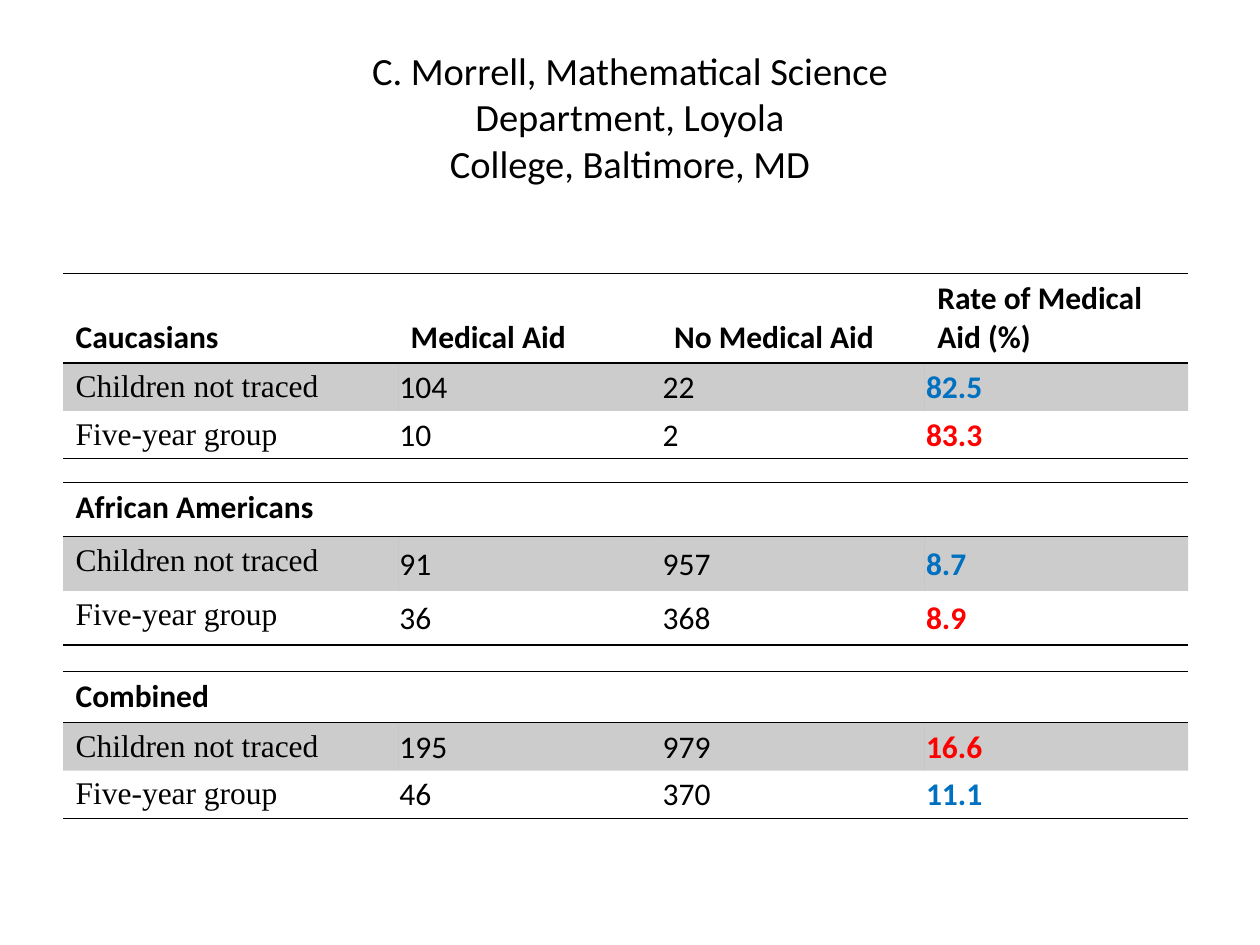
from lxml import etree
from pptx import Presentation
from pptx.dml.color import RGBColor as Rgb
from pptx.enum.text import MSO_ANCHOR as Anchor, PP_ALIGN as Align
from pptx.oxml.ns import qn
from pptx.util import Inches, Pt

INK = {"text": "000000", "band": "000000", "low": "0070C0", "high": "FF0000"}
PLAIN = "{2D5ABB26-0587-4C30-8999-92F81FD0307C}"
COLS = [2.66, 2.09, 2.09, 2.09]
NAMES = ["Children not traced", "Five-year group"]

# top, row heights, header cells, (aid, no aid, rate, rate colour) per row
GROUPS = [
    (2.17, [0.71, 0.38, 0.38],
     ["Caucasians", "Medical Aid", "No Medical Aid", "Rate of Medical Aid (%)"],
     [("104", "22", "82.5", "low"), ("10", "2", "83.3", "high")]),
    (3.83, [0.43, 0.43, 0.43], ["African Americans", "", "", ""],
     [("91", "957", "8.7", "low"), ("36", "368", "8.9", "high")]),
    (5.33, [0.4, 0.38, 0.38], ["Combined", "", "", ""],
     [("195", "979", "16.6", "high"), ("46", "370", "11.1", "low")]),
]


def style(font, size, face="Calibri", color="text", bold=False):
    font.size, font.name, font.bold = Pt(size), face, bold
    font.color.rgb = Rgb.from_string(INK[color])


def add_line(cell, side):
    """Rule one side of a cell: T for top, B for bottom."""
    props = cell._tc.get_or_add_tcPr()
    line = etree.SubElement(props, qn("a:ln" + side), w=str(Pt(1)))
    fill = etree.SubElement(line, qn("a:solidFill"))
    etree.SubElement(fill, qn("a:srgbClr"), val=INK["text"])


def shade(cell):
    """Fill a cell with the band colour at 20 % opacity."""
    cell.fill.solid()
    cell.fill.fore_color.rgb = Rgb.from_string(INK["band"])
    color = cell._tc.tcPr.find(".//" + qn("a:solidFill") + "/" + qn("a:srgbClr"))
    for node in cell._tc.tcPr.findall(qn("a:solidFill")):
        color = node.find(qn("a:srgbClr"))
    etree.SubElement(color, qn("a:alpha"), val="20000")


def write(cell, text, **look):
    cell.text = text
    style(cell.text_frame.paragraphs[0].font, 18)
    for run in cell.text_frame.paragraphs[0].runs:
        style(run.font, 18, **look)


def add_title(slide, left, top, width, height):
    title = slide.shapes.title
    title.left, title.top = Inches(left), Inches(top)
    title.width, title.height = Inches(width), Inches(height)
    frame = title.text_frame
    frame.text = ("C. Morrell, Mathematical Science\vDepartment, Loyola"
                  "\vCollege, Baltimore, MD")
    frame.vertical_anchor = Anchor.MIDDLE
    frame.paragraphs[0].alignment = Align.CENTER
    for run in frame.paragraphs[0].runs:
        style(run.font, 22)


def add_group(slide, left, top, heights, heads, rows):
    """Place one group's table: a header, then a shaded and a plain row."""
    frame = slide.shapes.add_table(3, 4, Inches(left), Inches(top),
                                   Inches(sum(COLS)), Inches(sum(heights)))
    table = frame.table
    table.horz_banding = False
    table._tbl.tblPr.find(qn("a:tableStyleId")).text = PLAIN
    for col, width in zip(table.columns, COLS):
        col.width = Inches(width)
    for row, height in zip(table.rows, heights):
        row.height = Inches(height)

    for col, head in enumerate(heads):
        cell = table.cell(0, col)
        write(cell, head, bold=True)
        if heads[1]:
            cell.vertical_anchor = Anchor.BOTTOM
        add_line(cell, "T")
        add_line(cell, "B")

    for row, (name, (*counts, rate, color)) in enumerate(zip(NAMES, rows), 1):
        write(table.cell(row, 0), name, face="Times New Roman")
        for col, text in enumerate([*counts, rate], 1):
            cell = table.cell(row, col)
            last = col == 3
            write(cell, text, color=color if last else "text", bold=last)
            cell.vertical_anchor = Anchor.MIDDLE
            cell.margin_left = cell.margin_right = Inches(0.01)
            cell.margin_top, cell.margin_bottom = Inches(0.01), 0
        for col in range(4):
            if row == 1:
                shade(table.cell(row, col))
            else:
                add_line(table.cell(row, col), "B")


def main():
    deck = Presentation()
    deck.slide_width, deck.slide_height = Inches(10), Inches(7.5)
    slide = deck.slides.add_slide(deck.slide_layouts[5])
    add_title(slide, 0.5, 0.3, 9, 1.25)
    for group in GROUPS:
        add_group(slide, 0.5, *group)
    deck.save("out.pptx")


if __name__ == "__main__":
    main()
